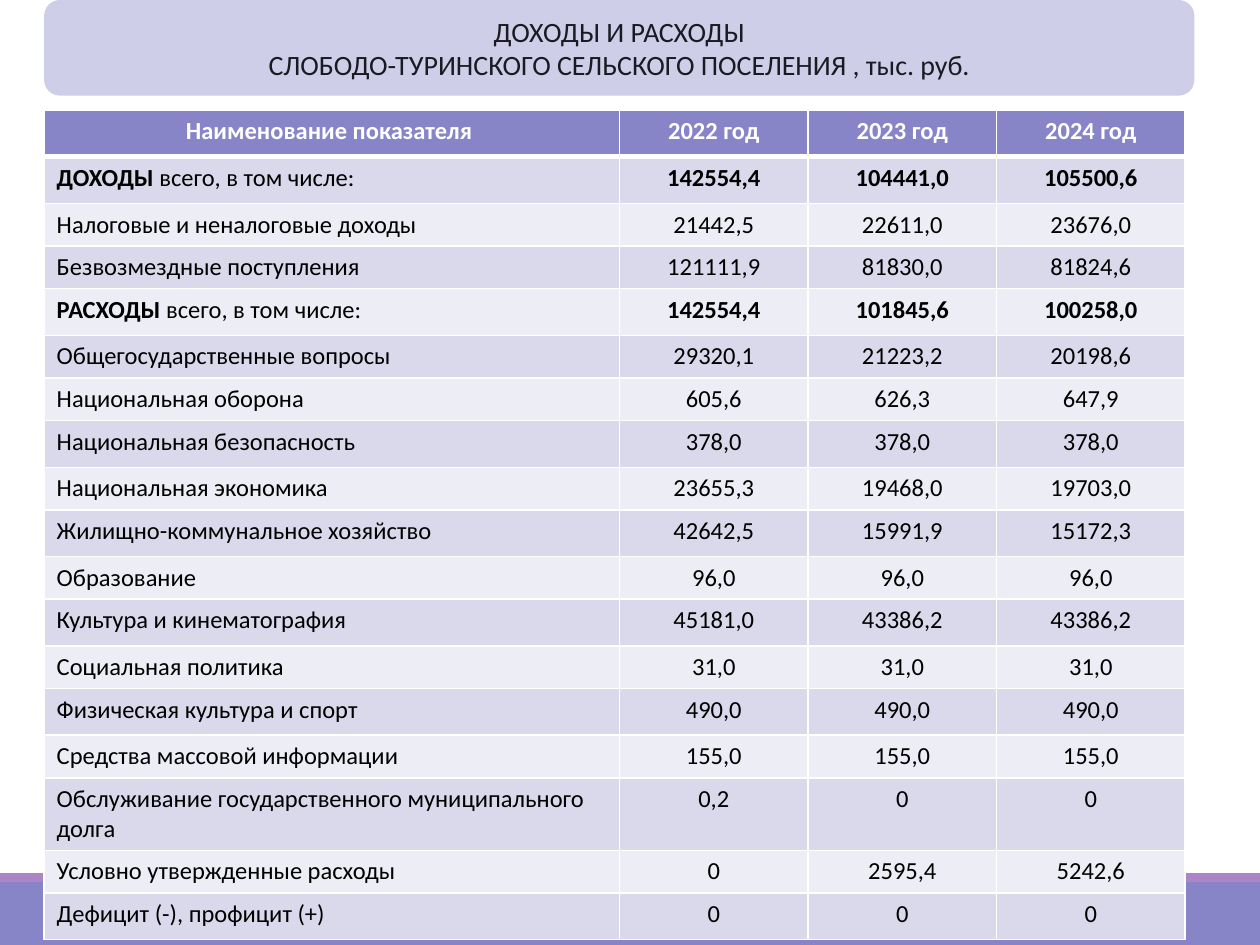
from lxml.etree import SubElement
from pptx import Presentation
from pptx.dml.color import RGBColor
from pptx.enum.shapes import MSO_SHAPE as Shape
from pptx.enum.text import MSO_ANCHOR as Anchor, PP_ALIGN as Align
from pptx.oxml.ns import qn
from pptx.util import Cm, Pt

FONT = "Calibri"
COLORS = {
    "header": "8784C7", "stripe": "AD84C6", "title": "CFCEE9", "title_text": "1B1A22",
    "odd": "D9D9EB", "even": "EDEDF5", "white": "FFFFFF", "black": "000000",
}
TITLE = ["ДОХОДЫ И РАСХОДЫ", "СЛОБОДО-ТУРИНСКОГО СЕЛЬСКОГО ПОСЕЛЕНИЯ , тыс. руб."]
HEADER = ["Наименование показателя ", "2022 год", "2023 год", "2024 год"]
TOTAL_NOTE = "всего, в том числе:"
SHORT, TALL, DOUBLE = 0.86, 0.94, 1.46
# Row height in cm, label, values by year
BUDGET = [
    (TALL, "ДОХОДЫ ", "142554,4", "104441,0", "105500,6"),
    (SHORT, "Налоговые и неналоговые доходы", "21442,5", "22611,0", "23676,0"),
    (SHORT, "Безвозмездные поступления", "121111,9", "81830,0", "81824,6"),
    (TALL, "РАСХОДЫ ", "142554,4", "101845,6", "100258,0"),
    (SHORT, "Общегосударственные вопросы", "29320,1", "21223,2", "20198,6"),
    (SHORT, "Национальная оборона", "605,6", "626,3", "647,9"),
    (TALL, "Национальная безопасность", "378,0", "378,0", "378,0"),
    (SHORT, "Национальная экономика", "23655,3", "19468,0", "19703,0"),
    (TALL, "Жилищно-коммунальное хозяйство", "42642,5", "15991,9", "15172,3"),
    (SHORT, "Образование", "96,0", "96,0", "96,0"),
    (TALL, "Культура и кинематография", "45181,0", "43386,2", "43386,2"),
    (SHORT, "Социальная политика", "31,0", "31,0", "31,0"),
    (TALL, "Физическая культура и спорт", "490,0", "490,0", "490,0"),
    (SHORT, "Средства массовой информации", "155,0", "155,0", "155,0"),
    (DOUBLE, "Обслуживание государственного муниципального долга", "0,2", "0", "0"),
    (SHORT, "Условно утвержденные расходы", "0", "2595,4", "5242,6"),
    (TALL, "Дефицит (-), профицит (+)", "0", "0", "0"),
]
TOTALS = {"ДОХОДЫ ", "РАСХОДЫ "}
COLUMN_WIDTHS = [11.6, 3.8, 3.8, 3.8]
LEFT, TABLE_TOP = 0.89, 2.22


def color(name):
    return RGBColor.from_string(COLORS[name])


def add_block(slide, kind, box, fill):
    shape = slide.shapes.add_shape(kind, *map(Cm, box))
    shape.shadow.inherit = False
    shape.fill.solid()
    shape.fill.fore_color.rgb = color(fill)
    shape.line.fill.background()
    return shape


def style_paragraph(paragraph, size, font_color, align, bold=False):
    paragraph.alignment = align
    font = paragraph.font
    font.name, font.size, font.bold = FONT, Pt(size), bold
    font.color.rgb = color(font_color)


def add_title(slide):
    shape = add_block(slide, Shape.ROUNDED_RECTANGLE, (LEFT, 0, 23.19, 1.93), "title")
    frame = shape.text_frame
    frame.word_wrap = True
    frame.vertical_anchor = Anchor.MIDDLE
    frame.text = "\n".join(TITLE)
    for paragraph in frame.paragraphs:
        style_paragraph(paragraph, 16, "title_text", Align.CENTER)


def set_borders(cell, top, bottom):
    """White cell borders; widths in points, the sides are 1 pt."""
    properties = cell._tc.get_or_add_tcPr()
    for side, width in (("L", 1), ("R", 1), ("T", top), ("B", bottom)):
        line = SubElement(properties, qn(f"a:ln{side}"), w=str(Pt(width)))
        fill = SubElement(line, qn("a:solidFill"))
        SubElement(fill, qn("a:srgbClr"), val=COLORS["white"])


def fill_cell(cell, text, row, column):
    is_header = row == 0
    is_total = BUDGET[row - 1][1] in TOTALS and not is_header
    is_label = column == 0 and not is_header
    set_borders(cell, 3 if row == 1 else 1, 3 if is_header else 1)
    cell.fill.solid()
    cell.fill.fore_color.rgb = color("header" if is_header else "odd" if row % 2 else "even")

    paragraph = cell.text_frame.paragraphs[0]
    run = paragraph.add_run()
    run.text = text
    style_paragraph(paragraph, 14, "white" if is_header else "black",
                    Align.LEFT if is_label else Align.CENTER,
                    is_header or (is_total and not is_label))
    if is_total and is_label:
        run.font.bold = True
        paragraph.add_run().text = TOTAL_NOTE


def add_budget_table(slide):
    rows = [(TALL, *HEADER), *BUDGET]
    size = sum(COLUMN_WIDTHS), sum(row[0] for row in rows)
    table = slide.shapes.add_table(
        len(rows), len(HEADER), *map(Cm, (LEFT, TABLE_TOP, *size))).table
    for column, width in zip(table.columns, COLUMN_WIDTHS):
        column.width = Cm(width)
    for row, (height, *texts) in enumerate(rows):
        table.rows[row].height = Cm(height)
        for column, text in enumerate(texts):
            fill_cell(table.cell(row, column), text, row, column)


def main():
    presentation = Presentation()
    presentation.slide_width, presentation.slide_height = Cm(25.4), Cm(19.05)
    slide = presentation.slides.add_slide(presentation.slide_layouts[6])
    add_block(slide, Shape.RECTANGLE, (0, 17.78, 25.4, 1.27), "header")
    add_block(slide, Shape.RECTANGLE, (0, 17.6, 25.4, 0.18), "stripe")
    add_title(slide)
    add_budget_table(slide)
    presentation.save("out.pptx")


if __name__ == "__main__":
    main()
